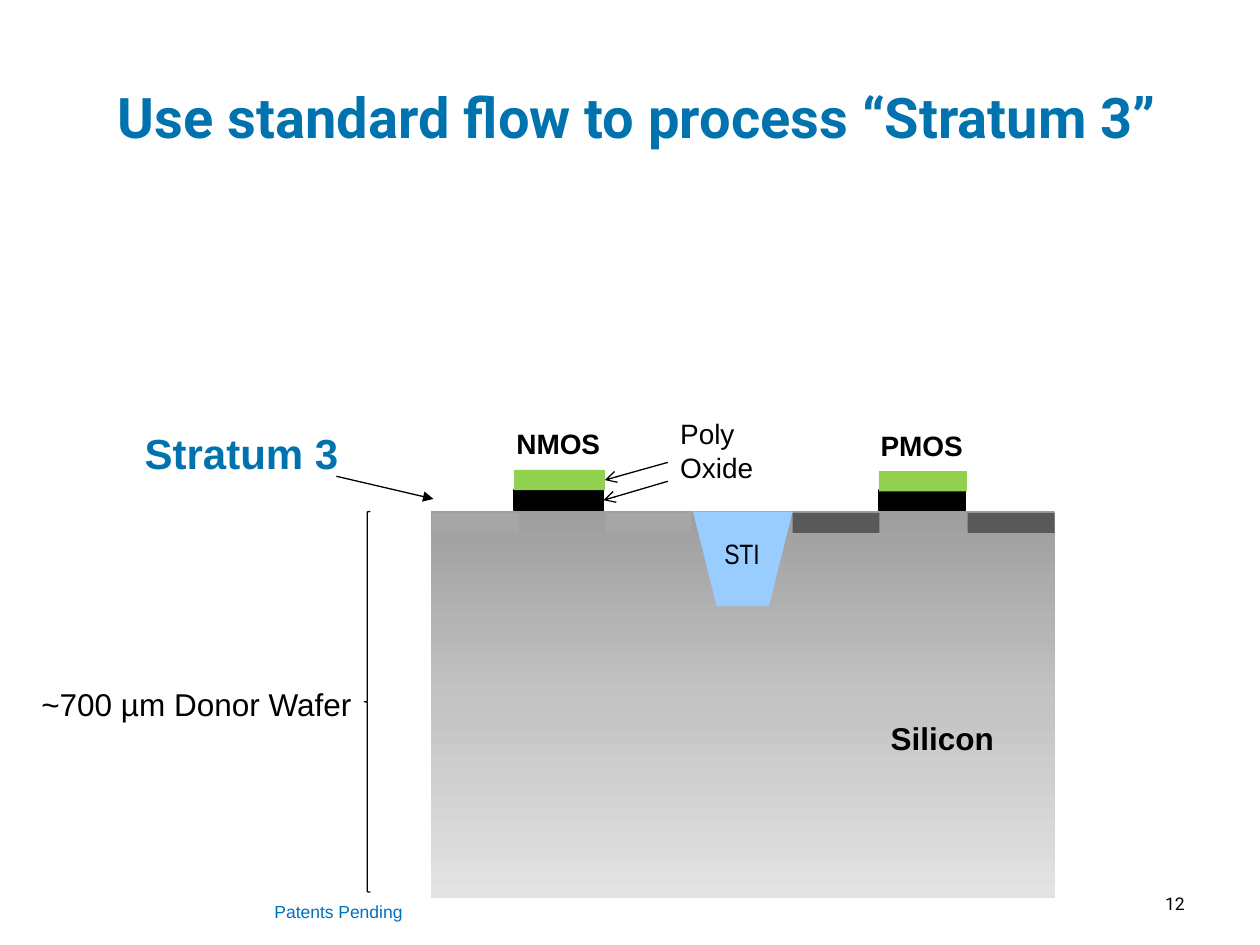
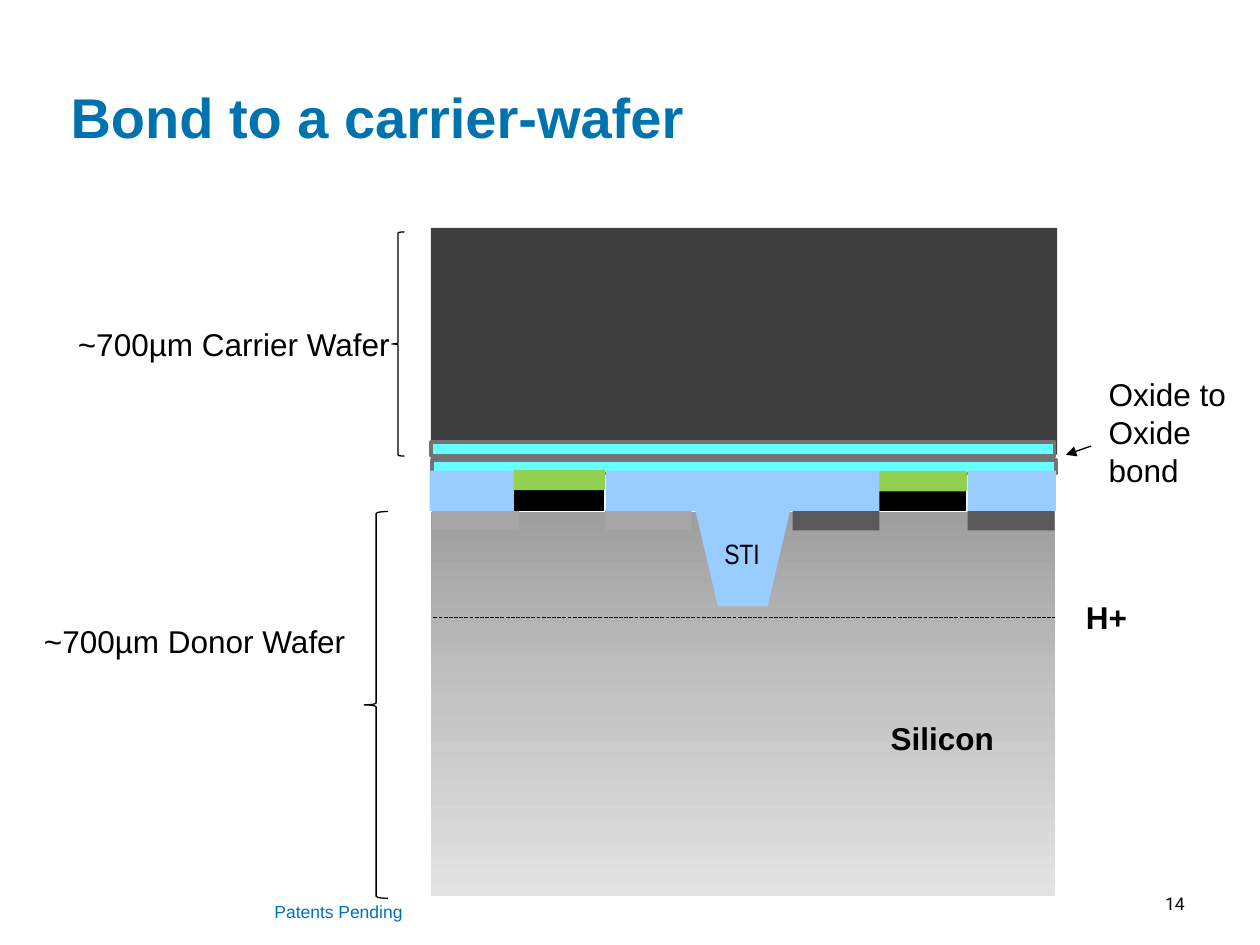
from copy import deepcopy
from dataclasses import dataclass
from lxml.etree import SubElement
from pptx import Presentation
from pptx.dml.color import RGBColor
from pptx.enum.dml import MSO_LINE
from pptx.enum.shapes import MSO_CONNECTOR, MSO_SHAPE
from pptx.enum.text import MSO_ANCHOR, PP_ALIGN
from pptx.oxml.ns import qn
from pptx.util import Inches, Pt

WIDE, HIGH = Inches(10), Inches(7.5)
COLS, ROWS = 100, 75

HUES = {
    "black": "000000", "title": "0073AE", "foot": "0070C0",
    "poly": "92D050", "oxide": "99CCFF", "bond": "66FFFF", "edge": "737373",
    "n well": "A6A6A6", "p well": "595959", "carrier": "404040",
    "top": "9E9E9E", "mid": "C4C4C4", "base": "E3E3E3",
}


# All places are in grid columns and rows
@dataclass
class Block:
    x: float
    y: float
    w: float
    h: float
    fill: str = ""
    line: str = ""
    pen: float = 0.75
    form: MSO_SHAPE = MSO_SHAPE.RECTANGLE
    turn: float = 0


@dataclass
class Label:
    text: str
    x: float
    y: float
    w: float
    h: float
    size: float = 18
    bold: bool = False
    hue: str = "black"
    font: str = "Arial"
    align: PP_ALIGN = PP_ALIGN.LEFT
    wrap: bool = False


@dataclass
class Link:
    start: tuple
    end: tuple
    head: str = ""
    dash: bool = False


def col(n: float) -> int:
    return round(WIDE * n / COLS)


def row(n: float) -> int:
    return round(HIGH * n / ROWS)


def hue(name: str) -> RGBColor:
    return RGBColor.from_string(HUES[name])


def place(x, y, w, h) -> tuple:
    return col(x), row(y), col(w), row(h)


def style(frame, item: Label) -> None:
    for para in frame.paragraphs:
        para.alignment = item.align
        for run in para.runs:
            run.font.name, run.font.size = item.font, Pt(item.size)
            run.font.bold = item.bold
            run.font.color.rgb = hue(item.hue)


def draw(slide, item: Block):
    shape = slide.shapes.add_shape(item.form, *place(item.x, item.y, item.w, item.h))
    shape.shadow.inherit = False
    shape.rotation = item.turn
    if item.fill:
        shape.fill.solid()
        shape.fill.fore_color.rgb = hue(item.fill)
    else:
        shape.fill.background()
    if item.line:
        shape.line.color.rgb = hue(item.line)
        shape.line.width = Pt(item.pen)
    else:
        shape.line.fill.background()
    return shape


def write(slide, item: Label) -> None:
    frame = slide.shapes.add_textbox(*place(item.x, item.y, item.w, item.h)).text_frame
    frame.word_wrap = item.wrap
    frame.text = item.text
    style(frame, item)


def join(slide, item: Link, goal=None) -> None:
    (x1, y1), (x2, y2) = item.start, item.end
    wire = slide.shapes.add_connector(
        MSO_CONNECTOR.STRAIGHT, col(x1), row(y1), col(x2), row(y2))
    if goal is not None:
        wire.end_connect(goal, 3)
    wire.line.color.rgb = hue("black")
    wire.line.width = Pt(0.75)
    if item.dash:
        wire.line.dash_style = MSO_LINE.SQUARE_DOT
    props = wire.element.spPr
    if item.head:
        SubElement(props.find(qn("a:ln")), qn("a:tailEnd"), type=item.head)
    SubElement(props, qn("a:effectLst"))


def brace(slide, x: float, y: float, w: float, h: float) -> None:
    draw(slide, Block(x, y, w, h, line="black", form=MSO_SHAPE.LEFT_BRACE))


def shade(shape) -> None:
    """Fade the wafer from dark at the top to light at the base."""
    shape.fill.gradient()
    shape.fill.gradient_angle = 270
    first = shape.element.spPr.find(qn("a:gradFill")).find(qn("a:gsLst"))[0]
    first.addnext(deepcopy(first))
    marks = zip(shape.fill.gradient_stops, (0, 0.5, 1), ("top", "mid", "base"))
    for stop, spot, name in marks:
        stop.color.rgb = hue(name)
        stop.position = spot


# Title, page number and footer
def start(deck, title: Label, page: str):
    slide = deck.slides.add_slide(deck.slide_layouts[5])
    head = slide.shapes.title
    head.left, head.top, head.width, head.height = place(title.x, title.y, title.w, title.h)
    head.text_frame.text = title.text
    head.text_frame.vertical_anchor = MSO_ANCHOR.MIDDLE
    style(head.text_frame, title)
    write(slide, Label(page, 83.9, 70.4, 11.1, 3.3, 10, font="Roboto",
                       align=PP_ALIGN.RIGHT, wrap=True))
    write(slide, Label("Patents Pending", 20.8, 71, 12.2, 2.7, 10, hue="foot"))
    return slide


# Donor wafer with trench, wells and gates; returns the left gate's two layers
def donor(slide, deep: float, trench: float, well: float) -> list:
    shade(draw(slide, Block(34.2, 40.6, 49.5, deep)))
    draw(slide, Block(55, trench, 7.9, 48.1 - trench, "oxide",
                      form=MSO_SHAPE.TRAPEZOID, turn=180))
    for x, kind in ((34.3, "n"), (48, "n"), (62.9, "p"), (76.8, "p")):
        draw(slide, Block(x, well, 6.9, 1.6, kind + " well"))
    gates = []
    for x, y, w in ((40.8, 37.3, 7.2), (69.75, 37.4, 7)):
        gates.append(draw(slide, Block(x, 38.9, w - 0.1, 1.6, "black", "black")))
        gates.append(draw(slide, Block(x, y, w, 1.6, "poly")))
    write(slide, Label("STI", 56.5, 42.1, 6.3, 3.7, 16, font="Arial Narrow", wrap=True))
    write(slide, Label("Silicon", 69.7, 56.6, 11.1, 4, bold=True, wrap=True))
    return gates[:2]


def flow(deck) -> None:
    slide = start(deck, Label("Use standard flow to process “Stratum 3”", 1.2, 3, 98.8, 12.5,
                              32, True, "title", "Roboto", PP_ALIGN.CENTER), "12")
    oxide, poly = donor(slide, 30.7, 40.6, 40.7)
    brace(slide, 28.9, 40.6, 0.5, 30.2)

    # Labels and their arrows
    for item in (
        Label("~700 µm Donor Wafer", 2.3, 53.9, 26.7, 4),
        Label("NMOS", 40, 33.4, 8.8, 3.7, 16, True),
        Label("PMOS", 68.9, 33.5, 8.6, 3.7, 16, True),
        Label("Poly\nOxide", 53, 32.6, 7.9, 6.4, 16),
        Label("Stratum 3", 10.5, 33.4, 22.4, 5, 24, True, "title", wrap=True),
    ):
        write(slide, item)
    join(slide, Link((53, 36.7), (48, 38.1), "arrow"), poly)
    join(slide, Link((53, 38.2), (47.9, 39.7), "arrow"), oxide)
    join(slide, Link((26.7, 37.8), (34.4, 39.6), "triangle"))


def bond(deck) -> None:
    slide = start(deck, Label("Bond to a carrier-wafer", 4.6, 3, 95.4, 12.5,
                              32, True, "title"), "14")

    # Lower bond layer and carrier wafer
    draw(slide, Block(34.3, 36.5, 49.5, 1.1, "bond", "edge", 2))
    draw(slide, Block(34.2, 18.1, 49.7, 18, "carrier"))
    brace(slide, 31.1, 18.4, 1, 17.8)

    # Donor wafer, oxide between its gates, upper bond layer
    donor(slide, 30.5, 39.7, 40.5)
    brace(slide, 28.9, 40.6, 1.9, 30.7)
    for x, w in ((34.1, 6.7), (48.1, 21.7), (76.8, 7)):
        draw(slide, Block(x, 37.35, w, 3.2, "oxide"))
    draw(slide, Block(34.2, 35.1, 49.5, 1.1, "bond", "edge", 2))

    # Labels, cut line and arrow
    for item in (
        Label("~700µm Carrier Wafer", 5.2, 25.3, 27, 4),
        Label("~700µm Donor Wafer", 2.5, 48.9, 26.9, 4),
        Label("H+", 85.2, 47, 5.3, 4, bold=True),
        Label("Oxide to Oxide bond", 87, 29.3, 11.8, 10, wrap=True),
    ):
        write(slide, item)
    join(slide, Link((34.4, 49), (83.7, 49), dash=True))
    join(slide, Link((86.6, 35.4), (84.6, 36.1), "triangle"))


def main() -> None:
    deck = Presentation()
    deck.slide_width, deck.slide_height = WIDE, HIGH
    flow(deck)
    bond(deck)
    deck.save("out.pptx")


if __name__ == "__main__":
    main()
